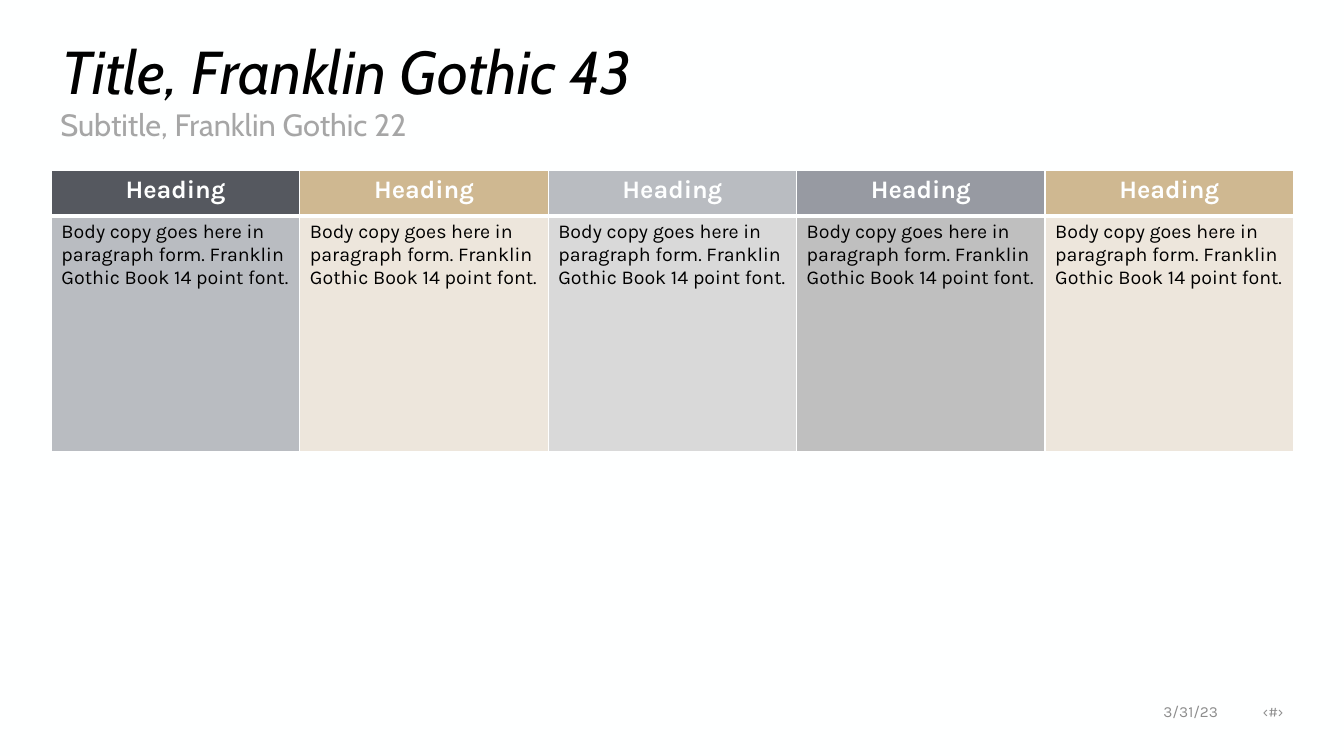
from dataclasses import dataclass

from lxml import etree
from pptx import Presentation
from pptx.dml.color import RGBColor
from pptx.enum.text import MSO_ANCHOR as Anchor, PP_ALIGN as Align
from pptx.oxml.ns import qn
from pptx.util import Pt

TITLE = "Title, Franklin Gothic 43"
SUBTITLE = "Subtitle, Franklin Gothic 22"
BODY = "Body copy goes here in paragraph form. Franklin Gothic Book 14 point font."
# heading, heading fill, body, body fill
COLUMNS = [
    ("Heading", "55585F", BODY, "B9BCC1"),
    ("Heading", "CFB891", BODY, "EDE6DC"),
    ("Heading", "B9BCC1", BODY, "D9D9D9"),
    ("Heading", "979AA2", BODY, "BFBFBF"),
    ("Heading", "CFB891", BODY, "EDE6DC"),
]
DATE = "3/31/23"
PAGE_NUMBER = "‹#›"


@dataclass(frozen=True)
class Theme:
    display: str = "Cabin"
    text: str = "Karla"
    paper: str = "FEFFFF"
    ink: str = "000000"
    subtitle: str = "A6A6A6"
    footer: str = "8C8C8C"
    title_size: float = 43.2
    subtitle_size: float = 22
    heading_size: float = 18
    body_size: float = 14
    footer_size: float = 11
    thin: float = 1
    thick: float = 3


THEME = Theme()
PX = 9144  # 100 px to the inch
SLIDE = (1333, 750)
TABLE = (51, 169, 1232, 279)
ROW_HEIGHTS = (45, 234)


def px(length):
    return round(length * PX)


def write(frame, text, font, size, color, align=Align.LEFT, bold=False, italic=False):
    frame.text = text
    para = frame.paragraphs[0]
    para.alignment = align
    style = para.runs[0].font
    style.name, style.size = font, Pt(size)
    style.bold, style.italic = bold, italic
    style.color.rgb = RGBColor.from_string(color)
    return para


def add_text(page, area, text, anchor, *style, **options):
    box = page.shapes.add_textbox(*map(px, area))
    frame = box.text_frame
    frame.word_wrap = True
    frame.vertical_anchor = anchor
    return write(frame, text, *style, **options)


def set_borders(cell, widths):
    """Draw the left, right, top and bottom edges, in that order."""
    properties = cell._tc.get_or_add_tcPr()
    for edge, width in zip("LRTB", widths):
        line = etree.SubElement(properties, qn(f"a:ln{edge}"), w=str(Pt(width)))
        fill = etree.SubElement(line, qn("a:solidFill"))
        etree.SubElement(fill, qn("a:srgbClr"), val=THEME.paper)


def fill_cell(cell, color, widths):
    set_borders(cell, widths)
    cell.fill.solid()
    cell.fill.fore_color.rgb = RGBColor.from_string(color)


def add_columns(page):
    table = page.shapes.add_table(2, len(COLUMNS), *map(px, TABLE)).table
    table.first_row = table.horz_banding = False
    for row, height in zip(table.rows, ROW_HEIGHTS):
        row.height = px(height)
    thin, thick = THEME.thin, THEME.thick
    for index, (heading, heading_fill, body, body_fill) in enumerate(COLUMNS):
        table.columns[index].width = px(TABLE[2] / len(COLUMNS))
        top, bottom = table.cell(0, index), table.cell(1, index)
        fill_cell(top, heading_fill, (thin, thin, thin, thick))
        fill_cell(bottom, body_fill, (thin, thin, thick, thin))
        write(top.text_frame, heading, THEME.text, THEME.heading_size,
              THEME.paper, Align.CENTER, bold=True)
        write(bottom.text_frame, body, THEME.text, THEME.body_size, THEME.ink)


def main():
    deck = Presentation()
    deck.slide_width, deck.slide_height = map(px, SLIDE)
    page = deck.slides.add_slide(deck.slide_layouts[6])
    page.background.fill.solid()
    page.background.fill.fore_color.rgb = RGBColor.from_string(THEME.paper)

    add_columns(page)
    title = add_text(page, (51, 42, 1232, 64), TITLE, Anchor.MIDDLE, THEME.display,
                     THEME.title_size, THEME.ink, italic=True)
    subtitle = add_text(page, (50, 104, 1233, 40), SUBTITLE, Anchor.TOP, THEME.display,
                        THEME.subtitle_size, THEME.subtitle)
    title.line_spacing = subtitle.line_spacing = 0.9

    for text, left, width in ((DATE, 1088, 130), (PAGE_NUMBER, 1218, 65)):
        add_text(page, (left, 688, width, 35), text, Anchor.MIDDLE, THEME.text,
                 THEME.footer_size, THEME.footer, align=Align.RIGHT)

    deck.save("out.pptx")


if __name__ == "__main__":
    main()
